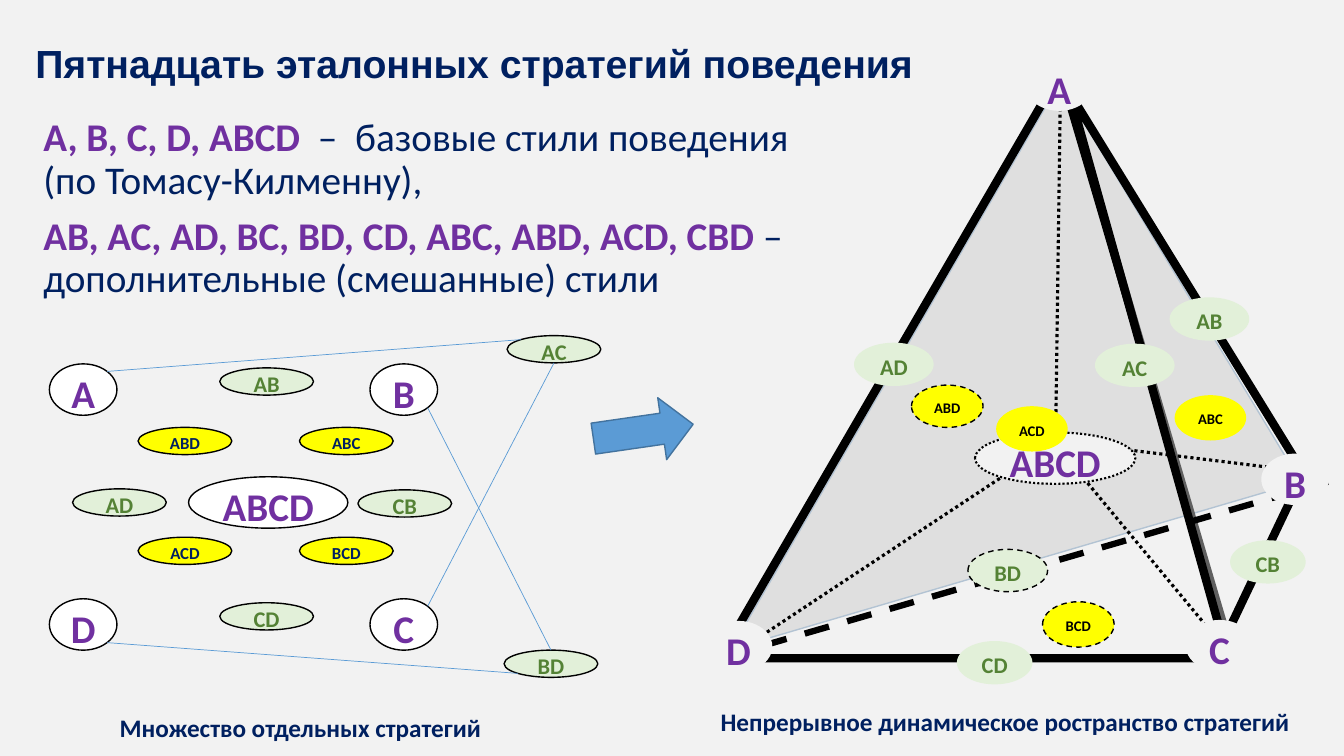
from dataclasses import dataclass
from math import sqrt

from lxml import etree
from pptx import Presentation
from pptx.dml.color import RGBColor
from pptx.enum.dml import MSO_LINE
from pptx.enum.shapes import MSO_CONNECTOR, MSO_SHAPE
from pptx.enum.text import MSO_ANCHOR, MSO_AUTO_SIZE, PP_ALIGN
from pptx.oxml.ns import qn
from pptx.util import Inches, Pt

ELLIPSE, RECT, TRIANGLE = MSO_SHAPE.OVAL, MSO_SHAPE.RECTANGLE, MSO_SHAPE.ISOSCELES_TRIANGLE
ARROW, STRAIGHT = MSO_SHAPE.RIGHT_ARROW, MSO_CONNECTOR.STRAIGHT
DASH, DOT = MSO_LINE.DASH, MSO_LINE.ROUND_DOT
LEFT, CENTER, RIGHT = PP_ALIGN.LEFT, PP_ALIGN.CENTER, PP_ALIGN.RIGHT
TOP, MIDDLE = MSO_ANCHOR.TOP, MSO_ANCHOR.MIDDLE


@dataclass(frozen=True)
class Theme:
    paper: str = "F2F2F2"
    white: str = "FFFFFF"
    black: str = "000000"
    shade: str = "BFBFBF"
    navy: str = "002060"
    purple: str = "7030A0"
    green: str = "548235"
    mint: str = "E2F0D9"
    yellow: str = "FFFF00"
    blue: str = "5B9BD5"
    steel: str = "43739E"
    font: str = "Calibri"
    title_font: str = "Arial"
    large: float = 28
    caption: float = 18
    pair: float = 16
    triple: float = 12
    small_triple: float = 10.5
    veil: int = 40


T = Theme()

# Content
TITLE = "Пятнадцать эталонных стратегий поведения"
BODY = [
    ("А, B, C, D, ABCD  ", "–  базовые стили поведения (по Томасу-Килменну),"),
    ("AB, AC, AD, BC, BD, CD, ABC, ABD, ACD, CBD ", "– дополнительные (смешанные) стили"),
]
CAPTIONS = [
    ("Непрерывное динамическое ространство стратегий", (6.74, 6.96, 6.15, 0.4)),
    ("Множество отдельных стратегий", (0.65, 7.02, 4.22, 0.4)),
]

# Separate strategies: label -> left, top
SET_BASIC = {"B": (3.67, 3.61), "C": (3.67, 5.94), "A": (0.49, 3.61), "D": (0.49, 5.94)}
SET_PAIRS = {"CD": (2.18, 5.98), "CB": (3.55, 4.86), "AD": (0.72, 4.85),
             "BD": (5, 6.45), "AB": (2.18, 3.65), "AС": (5.03, 3.33)}
SET_TRIPLES = {"ABD": (1.37, 4.24), "ABC": (2.97, 4.24), "BCD": (2.97, 5.33), "ACD": (1.37, 5.33)}
BASIC_SIZE, MIXED_SIZE = (0.67, 0.51), (0.93, 0.27)
# Each end: label and direction from the ellipse centre
SET_LINKS = [(("B", 1, 1), ("BD", 0, -1)), (("D", 1, 1), ("BD", -1, 1)),
             (("A", 1, -1), ("AС", -1, -1)), (("AС", 0, 1), ("C", 1, -1))]

# Strategy pyramid
BACK_FACE = [(10.51, 0.82), (7.25, 6.44), (12.9, 4.78)]
SIDE_FACE = [(10.47, 0.98), (12.27, 6.34), (12.98, 4.63)]
INNER_EDGES = [((7.14, 6.58), (10.44, 4.4)), ((10.47, 4.34), (10.52, 0.71)),
               ((10.51, 4.38), (12.95, 4.68)), ((10.47, 4.41), (12.23, 6.53))]
VERTICES = {"B": (12.51, 4.5), "C": (11.76, 6.15), "A": (10.17, 0.59), "D": (6.99, 6.16)}
# label, box, dashed outline
EDGE_STYLES = [
    ("AB", (11.6, 2.95, 0.79, 0.43), False), ("CD", (9.49, 6.36, 0.75, 0.43), False),
    ("CB", (12.2, 5.36, 0.75, 0.43), False), ("AD", (8.47, 3.4, 0.79, 0.43), False),
    ("BD", (9.6, 5.45, 0.79, 0.42), True), ("AC", (10.86, 3.41, 0.79, 0.43), False),
]
FACE_STYLES = [
    ("ABD", (9.04, 3.82, 0.71, 0.42), True), ("BCD", (10.34, 5.97, 0.71, 0.45), True),
    ("ABC", (11.65, 3.92, 0.71, 0.45), False), ("ACD", (9.88, 4.03, 0.71, 0.45), False),
]


# Helpers
def inches(values):
    return [Inches(v) for v in values]


def stroke(line, color, width, dash=None):
    line.color.rgb = RGBColor.from_string(color)
    line.width = Pt(width)
    if dash:
        line.dash_style = dash


def paint(shape, fill, outline=None, opacity=None):
    shape.shadow.inherit = False
    shape.fill.solid()
    shape.fill.fore_color.rgb = RGBColor.from_string(fill)
    if opacity:
        color = shape.element.spPr.find(qn("a:solidFill"))[0]
        etree.SubElement(color, qn("a:alpha")).set("val", str(opacity * 1000))
    if outline:
        stroke(shape.line, *outline)
    else:
        shape.line.fill.background()
    return shape


def add_preset(parent, kind, box, fill, outline=None, opacity=None):
    return paint(parent.add_shape(kind, *inches(box)), fill, outline, opacity)


def add_face(parent, points, fill, outline, opacity=None):
    first, *rest = [inches(p) for p in points]
    builder = parent.build_freeform(*first)
    builder.add_line_segments(rest, close=True)
    return paint(builder.convert_to_shape(), fill, outline, opacity)


def add_line(parent, start, end, color, width, dash=None):
    link = parent.add_connector(STRAIGHT, *inches(start + end))
    stroke(link.line, color, width, dash)
    etree.SubElement(link.element.spPr, qn("a:effectLst"))


def add_run(paragraph, text, size, color, bold=True, font=T.font):
    run = paragraph.add_run()
    run.text = text
    run.font.size, run.font.bold, run.font.name = Pt(size), bold, font
    run.font.color.rgb = RGBColor.from_string(color)


def add_label(parent, text, box, fill, size, color, outline=None):
    frame = add_preset(parent, ELLIPSE, box, fill, outline).text_frame
    frame.word_wrap = False
    frame.vertical_anchor = MIDDLE
    frame.margin_left = frame.margin_right = frame.margin_top = frame.margin_bottom = 0
    paragraph = frame.paragraphs[0]
    paragraph.alignment, paragraph.line_spacing = CENTER, 1.15
    add_run(paragraph, text, size, color)


def place(placeholder, box):
    placeholder.left, placeholder.top, placeholder.width, placeholder.height = inches(box)
    # Bring the text in front of the translucent pyramid backdrop
    placeholder.element.getparent().append(placeholder.element)
    frame = placeholder.text_frame
    frame.word_wrap, frame.auto_size, frame.vertical_anchor = True, MSO_AUTO_SIZE.NONE, TOP
    return frame


def ellipse_point(box, dx, dy):
    left, top, width, height = box
    reach = sqrt(dx * dx + dy * dy)
    return (left + width / 2 * (1 + dx / reach), top + height / 2 * (1 + dy / reach))


prs = Presentation()
prs.slide_width, prs.slide_height = Inches(13.33), Inches(7.5)
slide = prs.slides.add_slide(prs.slide_layouts[1])
slide.background.fill.solid()
slide.background.fill.fore_color.rgb = RGBColor.from_string(T.paper)
shapes = slide.shapes

# Pyramid
add_face(shapes, BACK_FACE, T.shade, (T.steel, 1))
pyramid = shapes.add_group_shape().shapes
add_preset(pyramid, RECT, (6.08, 0.01, 8.41, 7.43), T.paper, opacity=T.veil)
front = add_preset(pyramid, TRIANGLE, (7.14, 0.71, 5.09, 5.82), T.paper, (T.black, 6), T.veil)
front.adjustments[0] = 0.664
side = add_face(pyramid, SIDE_FACE, T.paper, (T.black, 6), T.veil)
side.rotation = 2.9
add_line(pyramid, (7.14, 6.53), (13.17, 4.78), T.black, 4.5, DASH)
add_preset(pyramid, ELLIPSE, (10.43, 4.34, 0.07, 0.06), T.paper, (T.black, 0.75), T.veil)
for start, end in INNER_EDGES:
    add_line(pyramid, start, end, T.black, 2.25, DOT)
for name, corner in VERTICES.items():
    add_label(pyramid, name, corner + BASIC_SIZE, T.paper, T.large, T.purple)
add_label(pyramid, "ABCD", (9.67, 4.29, 1.59, 0.51), T.paper, T.large, T.purple,
          (T.black, 1.5, DOT))

# Title and explanation
title, body = shapes.title, slide.placeholders[1]
heading = place(title, (0.25, 0.34, 9.62, 0.57)).paragraphs[0]
heading.alignment = LEFT
add_run(heading, TITLE, T.large, T.navy, font=T.title_font)
explanation = place(body, (0.33, 1.12, 7.78, 2))
for i, (styles, meaning) in enumerate(BODY):
    paragraph = explanation.add_paragraph() if i else explanation.paragraphs[0]
    paragraph.line_spacing, paragraph.space_before = 0.9, Pt(10)
    add_run(paragraph, styles, T.large, T.purple)
    add_run(paragraph, meaning, T.large, T.navy, bold=False)
    properties = paragraph._p.get_or_add_pPr()
    properties.set("marL", "0")
    properties.set("indent", "0")
    etree.SubElement(properties, qn("a:buNone"))

# Separate strategies
thin = (T.black, 1)
set_boxes = {}
for group, size, fill, type_size, color in [
    (SET_BASIC, BASIC_SIZE, T.white, T.large, T.purple),
    ({"ABCD": (1.87, 4.73)}, (1.58, 0.51), T.white, T.large, T.purple),
    (SET_PAIRS, MIXED_SIZE, T.mint, T.pair, T.green),
    (SET_TRIPLES, MIXED_SIZE, T.yellow, T.triple, T.navy),
]:
    for name, corner in group.items():
        set_boxes[name] = corner + size
        add_label(shapes, name, set_boxes[name], fill, type_size, color, thin)

# Mixed styles on the pyramid
mixed = shapes.add_group_shape().shapes
for group, fill, type_size, color in [(EDGE_STYLES, T.mint, T.pair, T.green),
                                      (FACE_STYLES, T.yellow, T.small_triple, T.black)]:
    for name, box, dashed in group:
        add_label(mixed, name, box, fill, type_size, color, thin + (DASH,) if dashed else None)

# Links and arrow
for ends in SET_LINKS:
    start, end = [ellipse_point(set_boxes[name], dx, dy) for name, dx, dy in ends]
    add_line(shapes, start, end, T.blue, 0.5)
arrow = add_preset(shapes, ARROW, (5.88, 3.97, 1, 0.62), T.blue, (T.steel, 1))
arrow.rotation = 351.8

# Captions
for text, box in CAPTIONS:
    frame = shapes.add_textbox(*inches(box)).text_frame
    frame.word_wrap = True
    frame.paragraphs[0].alignment = RIGHT
    add_run(frame.paragraphs[0], text, T.caption, T.navy)

prs.save("out.pptx")
